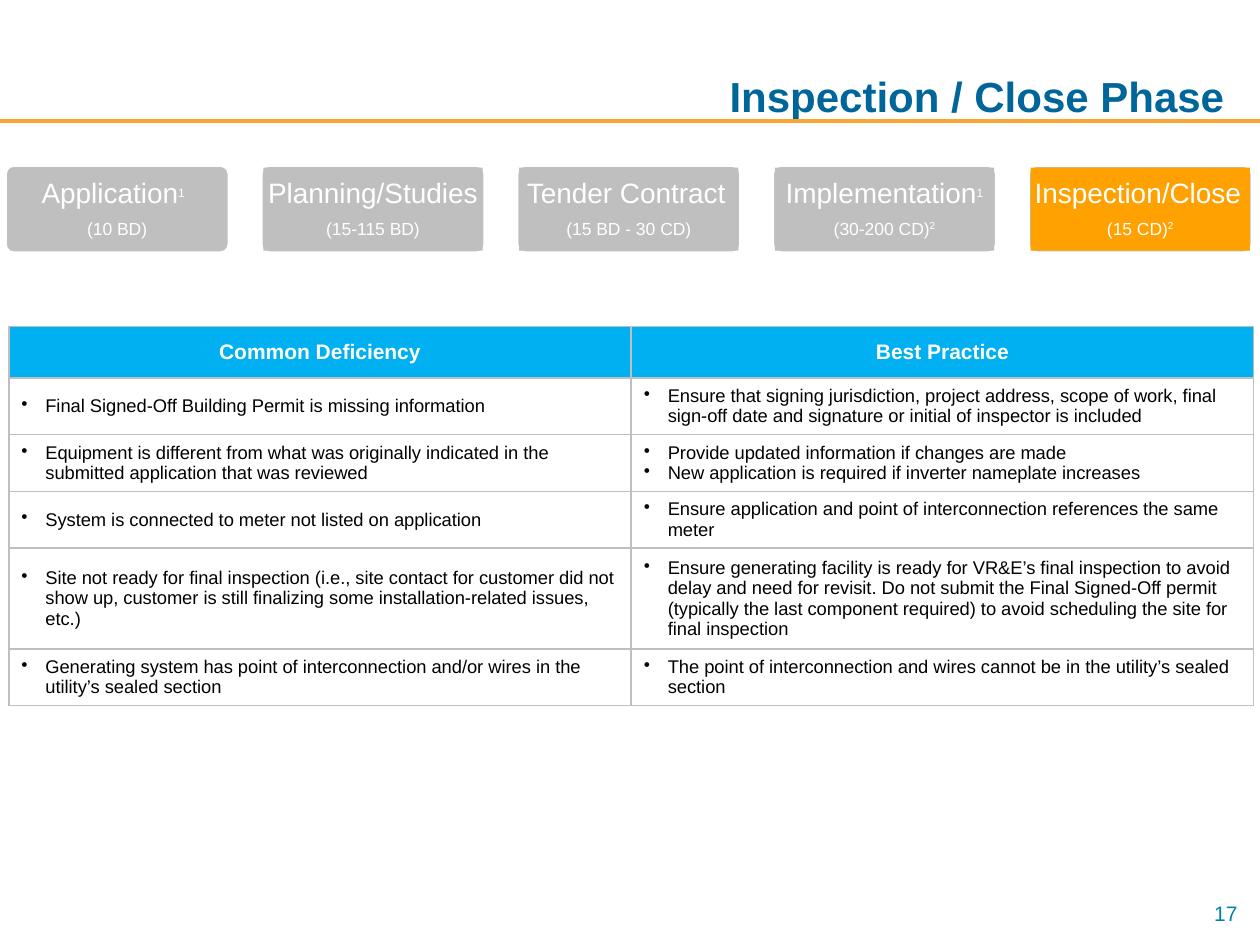
"""Build the Inspection / Close Phase slide with its phase strip and best practice table."""
import lxml.etree
import pptx
import pptx.chart.data
import pptx.dml.color
import pptx.enum.shapes
import pptx.enum.text
import pptx.oxml
import pptx.oxml.ns
import pptx.util

COLOURS = {"title": "006699", "rule": "FAA534", "number": "0082AA", "white": "FFFFFF",
           "black": "000000", "grey": "BFBFBF", "active": "FFA100", "header": "00B0F0"}
PAINT = {name: pptx.dml.color.RGBColor.from_string(value) for name, value in COLOURS.items()}
ALIGN = pptx.enum.text.PP_ALIGN
MIDDLE = pptx.enum.text.MSO_ANCHOR.MIDDLE
SHAPE = pptx.enum.shapes.MSO_SHAPE
WIDE, TALL = pptx.util.Inches(10), pptx.util.Inches(7.5)
INDENT = pptx.util.Inches(0.19)


def place(left, top, width, height):
    """Turn percentages of the slide into lengths."""
    return [int(share * side / 100) for share, side in
            zip((left, top, width, height), (WIDE, TALL, WIDE, TALL))]


def write(frame, lines, colour, para_format, bold=False, bullet=False):
    """Fill a text frame with lines, each a list of (text, size, raised) spans."""
    for index, line in enumerate(lines):
        para = frame.add_paragraph() if index else frame.paragraphs[0]
        if bullet:
            props = para._p.get_or_add_pPr()
            props.set("marL", str(INDENT))
            props.set("indent", str(-INDENT))
            mark = lxml.etree.SubElement(props, pptx.oxml.ns.qn("a:buChar"))
            mark.set("char", "•")
        for name, value in para_format.items():
            setattr(para, name, value)
        for text, size, raised in line:
            span = para.add_run()
            span.text = text
            look = {"name": "Arial", "size": pptx.util.Pt(size), "bold": bold}
            for name, value in look.items():
                setattr(span.font, name, value)
            span.font.color.rgb = PAINT[colour]
            if raised:
                span._r.get_or_add_rPr().set("baseline", "30000")


deck = pptx.Presentation()
deck.slide_width, deck.slide_height = WIDE, TALL
page = deck.slides.add_slide(deck.slide_layouts[5])

rule_height = int(TALL * 0.128)
rule = page.shapes.add_connector(pptx.enum.shapes.MSO_CONNECTOR.STRAIGHT,
                                 0, rule_height, WIDE, rule_height)
rule.line.color.rgb = PAINT["rule"]
rule.line.width = pptx.util.Pt(2)
lxml.etree.SubElement(rule._element.spPr, pptx.oxml.ns.qn("a:effectLst"))

title = page.shapes.title
title.left, title.top, title.width, title.height = place(13.8, 4.4, 85.3, 9.07)
title_format = {"vertical_anchor": pptx.enum.text.MSO_ANCHOR.BOTTOM, "word_wrap": True,
                "auto_size": pptx.enum.text.MSO_AUTO_SIZE.NONE}
for name, value in title_format.items():
    setattr(title.text_frame, name, value)
write(title.text_frame, [[("Inspection / Close Phase ", 24, False)]], "title",
      {"alignment": ALIGN.RIGHT}, bold=True)

number = page.shapes.add_textbox(*place(75.9, 94.67, 23.3, 5.33))
number.text_frame.word_wrap = True
write(number.text_frame, [[("17", 12, False)]], "number", {"alignment": ALIGN.RIGHT})

rows = [
    (["Common Deficiency"], ["Best Practice"]),
    (["Final Signed-Off Building Permit is missing information"],
     ["Ensure that signing jurisdiction, project address, scope of work, final sign-off date "
      "and signature or initial of inspector is included"]),
    (["Equipment is different from what was originally indicated in the submitted application "
      "that was reviewed"],
     ["Provide updated information if changes are made",
      "New application is required if inverter nameplate increases"]),
    (["System is connected to meter not listed on application"],
     ["Ensure application and point of interconnection references the same meter"]),
    (["Site not ready for final inspection (i.e., site contact for customer did not show up, "
      "customer is still finalizing some installation-related issues, etc.)"],
     ["Ensure generating facility is ready for VR&E’s final inspection to avoid delay and need "
      "for revisit. Do not submit the Final Signed-Off permit (typically the last component "
      "required) to avoid scheduling the site for final inspection"]),
    (["Generating system has point of interconnection and/or wires in the utility’s sealed "
      "section"],
     ["The point of interconnection and wires cannot be in the utility’s sealed section"]),
]
table = page.shapes.add_table(len(rows), 2, *place(0.7, 34.53, 98.8, 32.8)).table
for row_index, row in enumerate(rows):
    heading = row_index == 0
    for column_index, texts in enumerate(row):
        cell = table.cell(row_index, column_index)
        cell.vertical_anchor = MIDDLE
        cell.fill.solid()
        cell.fill.fore_color.rgb = PAINT["header" if heading else "white"]
        for position, side in enumerate(("lnL", "lnR", "lnT", "lnB")):
            border = pptx.oxml.parse_xml(
                f'<a:{side} {pptx.oxml.ns.nsdecls("a")} w="12700"><a:solidFill>'
                f'<a:srgbClr val="{COLOURS["grey"]}"/></a:solidFill></a:{side}>')
            cell._tc.get_or_add_tcPr().insert(position, border)
        write(cell.text_frame, [[(text, 12 if heading else 10.5, False)] for text in texts],
              "white" if heading else "black",
              {"alignment": ALIGN.CENTER if heading else ALIGN.LEFT},
              bold=heading, bullet=not heading)

phases = [
    (None, [("Application", 16, False), ("1", 12, True), (" ", 16, False)],
     [("(10 BD)", 10, False)]),
    ("grey", [("Planning/Studies", 16, False)], [("(15-115 BD)", 10, False)]),
    ("grey", [("Tender Contract", 16, False), (" ", 10, False)],
     [("(15 BD - 30 CD)", 10, False)]),
    ("grey", [("Implementation", 16, False), ("1", 12, True)],
     [("(30-200 CD)", 10, False), ("2", 10, True)]),
    ("active", [("Inspection/Close", 16, False), (" ", 10, False)],
     [("(15 CD)", 10, False), ("2", 10, True)]),
]
margin = pptx.util.Inches(0.02)
label_format = {"vertical_anchor": MIDDLE, "word_wrap": True, "margin_left": margin,
                "margin_right": margin, "margin_top": margin, "margin_bottom": margin}
for index, (fill, name_line, days_line) in enumerate(phases):
    left = 0.4 + 20.3 * index
    group = page.shapes.add_group_shape()
    card = group.shapes.add_shape(SHAPE.ROUNDED_RECTANGLE, *place(left, 17.47, 17.8, 9.33))
    card.adjustments[0] = 0.1
    card.shadow.inherit = False
    card.fill.solid()
    card.fill.fore_color.rgb = PAINT["grey"]
    card.line.color.rgb = PAINT["white"]
    card.line.width = pptx.util.Pt(2)

    label_place = place(left + 0.2, 17.73, 17.4, 8.8)
    if fill:
        label = group.shapes.add_shape(SHAPE.RECTANGLE, *label_place)
        label.shadow.inherit = False
        label.fill.solid()
        label.fill.fore_color.rgb = PAINT[fill]
        label.line.fill.background()
    else:
        label = group.shapes.add_textbox(*label_place)
    for name, value in label_format.items():
        setattr(label.text_frame, name, value)
    write(label.text_frame, [name_line, days_line], "white",
          {"alignment": ALIGN.CENTER, "line_spacing": 0.9, "space_after": pptx.util.Pt(6)})

deck.save("out.pptx")
